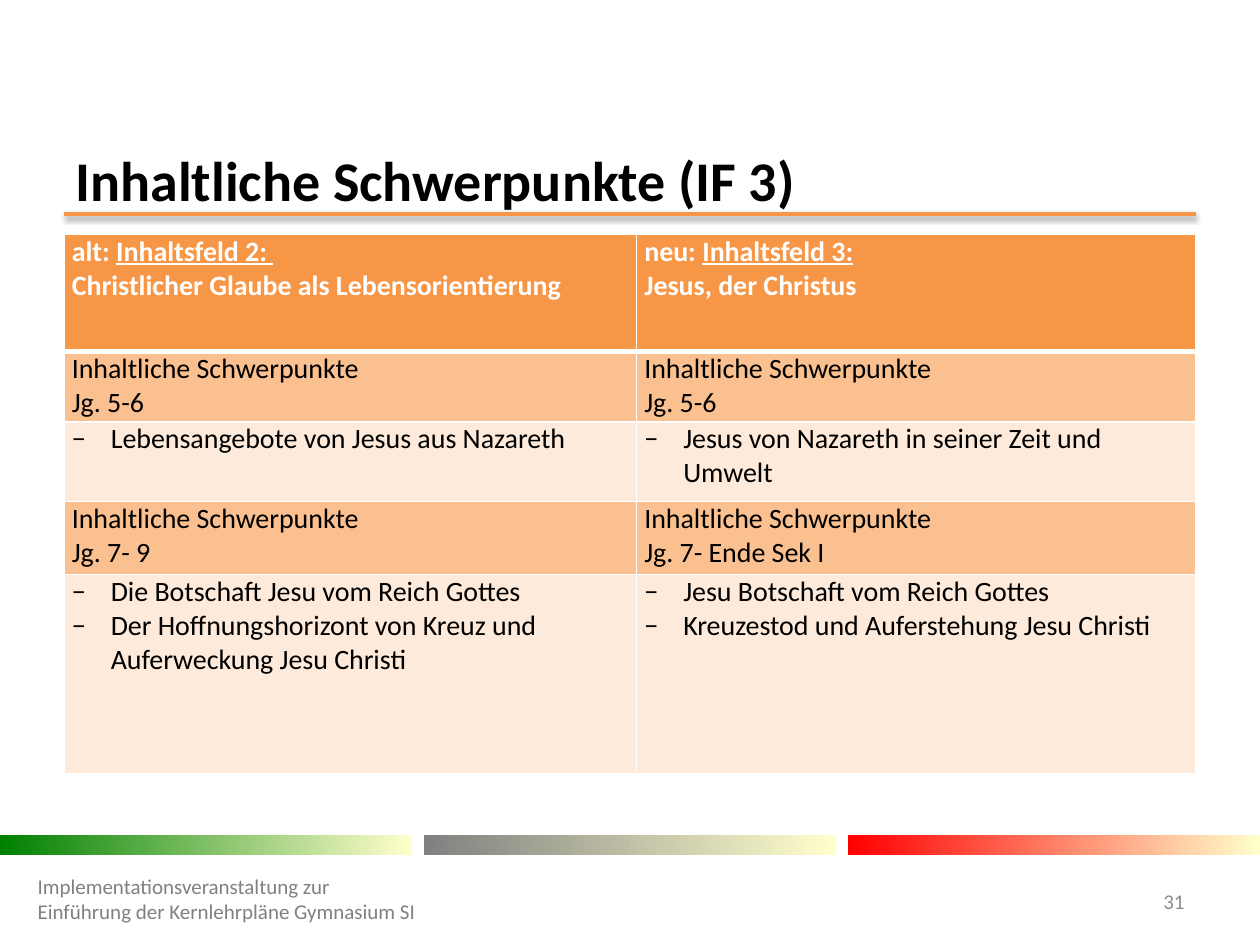
from dataclasses import dataclass

from lxml import etree
from pptx import Presentation
from pptx.dml.color import RGBColor
from pptx.enum.shapes import MSO_CONNECTOR, MSO_SHAPE
from pptx.enum.text import MSO_ANCHOR, MSO_AUTO_SIZE, PP_ALIGN
from pptx.oxml import parse_xml
from pptx.oxml.ns import nsdecls, qn
from pptx.util import Inches, Pt

RECT, STRAIGHT = MSO_SHAPE.RECTANGLE, MSO_CONNECTOR.STRAIGHT
MIDDLE, NO_FIT = MSO_ANCHOR.MIDDLE, MSO_AUTO_SIZE.NONE
LEFT, RIGHT = PP_ALIGN.LEFT, PP_ALIGN.RIGHT
TITLE_ONLY = 5


@dataclass(frozen=True)
class Theme:
    font: str = "Calibri"
    title_size: int = 32
    body_size: int = 16
    foot_size: int = 12
    text: str = "000000"
    white: str = "FFFFFF"
    accent: str = "F79646"
    band: str = "FAC090"
    pale: str = "FDEADA"
    foot: str = "808080"
    number: str = "8C8C8C"
    bar_end: str = "FFFFCC"
    bars: tuple = ("008000", "808080", "FF0000")


THEME = Theme()
W, H = 10, 7.5
MARGIN = 0.05 * W
CONTENT_W = W - 2 * MARGIN
COL_SHARES = (0.506, 0.494)
ROWS = (0.93, 0.56, 0.63, 0.58, 1.58)

# A heading cell holds lines; a line is a list of (text, underlined) runs.
HEADER = (
    [[("alt: ", False), ("Inhaltsfeld 2: ", True)],
     [("Christlicher Glaube als Lebensorientierung", False)]],
    [[("neu: ", False), ("Inhaltsfeld 3:", True)],
     [("Jesus, der Christus", False)]],
)
# Each stage: the school years, then the topics, for the old and new plan.
STAGES = (
    (("Jg. 5-6", "Jg. 5-6"),
     (["Lebensangebote von Jesus aus Nazareth\u00a0"],
      ["Jesus von Nazareth in seiner Zeit und Umwelt"])),
    (("Jg. 7- 9", "Jg. 7- Ende Sek I"),
     (["Die Botschaft Jesu vom Reich Gottes",
       "Der Hoffnungshorizont von Kreuz und Auferweckung Jesu Christi"],
      ["Jesu Botschaft vom Reich Gottes",
       "Kreuzestod und Auferstehung Jesu Christi"])),
)


def inches(box):
    return [Inches(v) for v in box]


def add_run(p, text, size, color, **extra):
    r = p.add_run()
    r.text = text
    formats = {"name": THEME.font, "size": Pt(size), "bold": False, **extra}
    for name, value in formats.items():
        setattr(r.font, name, value)
    r.font.color.rgb = RGBColor.from_string(color)


def set_frame(tf):
    formats = {"word_wrap": True, "auto_size": NO_FIT, "vertical_anchor": MIDDLE}
    for name, value in formats.items():
        setattr(tf, name, value)


def place_title(s, box, text):
    sp = s.shapes.title
    sp.left, sp.top, sp.width, sp.height = inches(box)
    set_frame(sp.text_frame)
    p = sp.text_frame.paragraphs[0]
    p.alignment = LEFT
    add_run(p, text, THEME.title_size, THEME.text, bold=True)


def add_rule(s, x1, x2, y):
    line = s.shapes.add_connector(STRAIGHT, *inches((x1, y, x2, y)))
    line.line.color.rgb = RGBColor.from_string(THEME.accent)
    line.line.width = Pt(2)
    line._element.spPr.append(parse_xml(
        f'<a:effectLst {nsdecls("a")}><a:outerShdw blurRad="{Pt(3.1)}" '
        f'dist="{Pt(1.6)}" dir="5400000" rotWithShape="0"><a:srgbClr val="000000">'
        '<a:alpha val="38000"/></a:srgbClr></a:outerShdw></a:effectLst>'))


def add_bars(s, box, share=0.327):
    """Spread the gradient bars evenly over the box."""
    x, y, w, h = box
    step = w * (1 - share) / (len(THEME.bars) - 1)
    for i, color in enumerate(THEME.bars):
        sp = s.shapes.add_shape(RECT, *inches((x + i * step, y, w * share, h)))
        sp.shadow.inherit = False
        sp.line.fill.background()
        sp.fill.gradient()
        sp.fill.gradient_angle = 0
        stops = zip(sp.fill.gradient_stops, (color, THEME.bar_end), (0, 1))
        for stop, stop_color, position in stops:
            stop.color.rgb = RGBColor.from_string(stop_color)
            stop.position = position


def add_bullet(p):
    pPr = p._p.get_or_add_pPr()
    pPr.set("marL", str(Inches(0.31)))
    pPr.set("indent", str(-Inches(0.31)))
    etree.SubElement(pPr, qn("a:buFont")).set("typeface", THEME.font)
    etree.SubElement(pPr, qn("a:buChar")).set("char", "−")


def set_borders(cell, bottom, top):
    tcPr = cell._tc.get_or_add_tcPr()
    for side, width in {"L": 1, "R": 1, "T": top, "B": bottom}.items():
        tcPr.append(parse_xml(
            f'<a:ln{side} {nsdecls("a")} w="{Pt(width)}"><a:solidFill>'
            f'<a:srgbClr val="{THEME.white}"/></a:solidFill></a:ln{side}>'))


def fill_cell(cell, lines, fill, color, bold=False, bullets=False, top=1, bottom=1):
    margins = {"margin_left": 0.06, "margin_right": 0.06,
               "margin_top": 0, "margin_bottom": 0}
    for name, value in margins.items():
        setattr(cell, name, Inches(value))
    set_borders(cell, bottom, top)
    cell.fill.solid()
    cell.fill.fore_color.rgb = RGBColor.from_string(fill)
    tf = cell.text_frame
    for i, line in enumerate(lines):
        p = tf.add_paragraph() if i else tf.paragraphs[0]
        if bullets:
            add_bullet(p)
        for text, underline in line:
            add_run(p, text, THEME.body_size, color, bold=bold, underline=underline)


def add_comparison(s, box):
    table = s.shapes.add_table(len(ROWS), len(COL_SHARES), *inches(box)).table
    for column, share in zip(table.columns, COL_SHARES):
        column.width = Inches(box[2] * share)
    for row, height in zip(table.rows, ROWS):
        row.height = Inches(height)
    for c, lines in enumerate(HEADER):
        fill_cell(table.cell(0, c), lines, THEME.accent, THEME.white,
                  bold=True, bottom=3)
        for i, (years, topics) in enumerate(STAGES):
            row = 1 + 2 * i
            heading = [[("Inhaltliche Schwerpunkte", False)], [(years[c], False)]]
            fill_cell(table.cell(row, c), heading, THEME.band, THEME.text,
                      top=1 if i else 3)
            fill_cell(table.cell(row + 1, c), [[(t, False)] for t in topics[c]],
                      THEME.pale, THEME.text, bullets=True)


def add_footer_text(s, box, text, color, alignment):
    tf = s.shapes.add_textbox(*inches(box)).text_frame
    set_frame(tf)
    p = tf.paragraphs[0]
    p.alignment = alignment
    add_run(p, text, THEME.foot_size, color)


def main():
    prs = Presentation()
    prs.slide_width, prs.slide_height = Inches(W), Inches(H)
    s = prs.slides.add_slide(prs.slide_layouts[TITLE_ONLY])
    add_rule(s, MARGIN + 0.01, W - MARGIN - 0.01, 1.7)
    add_bars(s, (0, 6.63, W, 0.16))
    place_title(s, (MARGIN, 1.23, CONTENT_W, 0.39), "Inhaltliche Schwerpunkte (IF 3)")
    add_comparison(s, (MARGIN + 0.01, 1.86, CONTENT_W - 0.02, sum(ROWS)))
    add_footer_text(s, (8.86, 6.95, 0.64, 0.4), "31", THEME.number, RIGHT)
    add_footer_text(s, (0.2, 6.9, 3.24, 0.47), "Implementationsveranstaltung zur "
                    "Einführung der Kernlehrpläne Gymnasium SI", THEME.foot, LEFT)
    prs.save("out.pptx")


if __name__ == "__main__":
    main()
